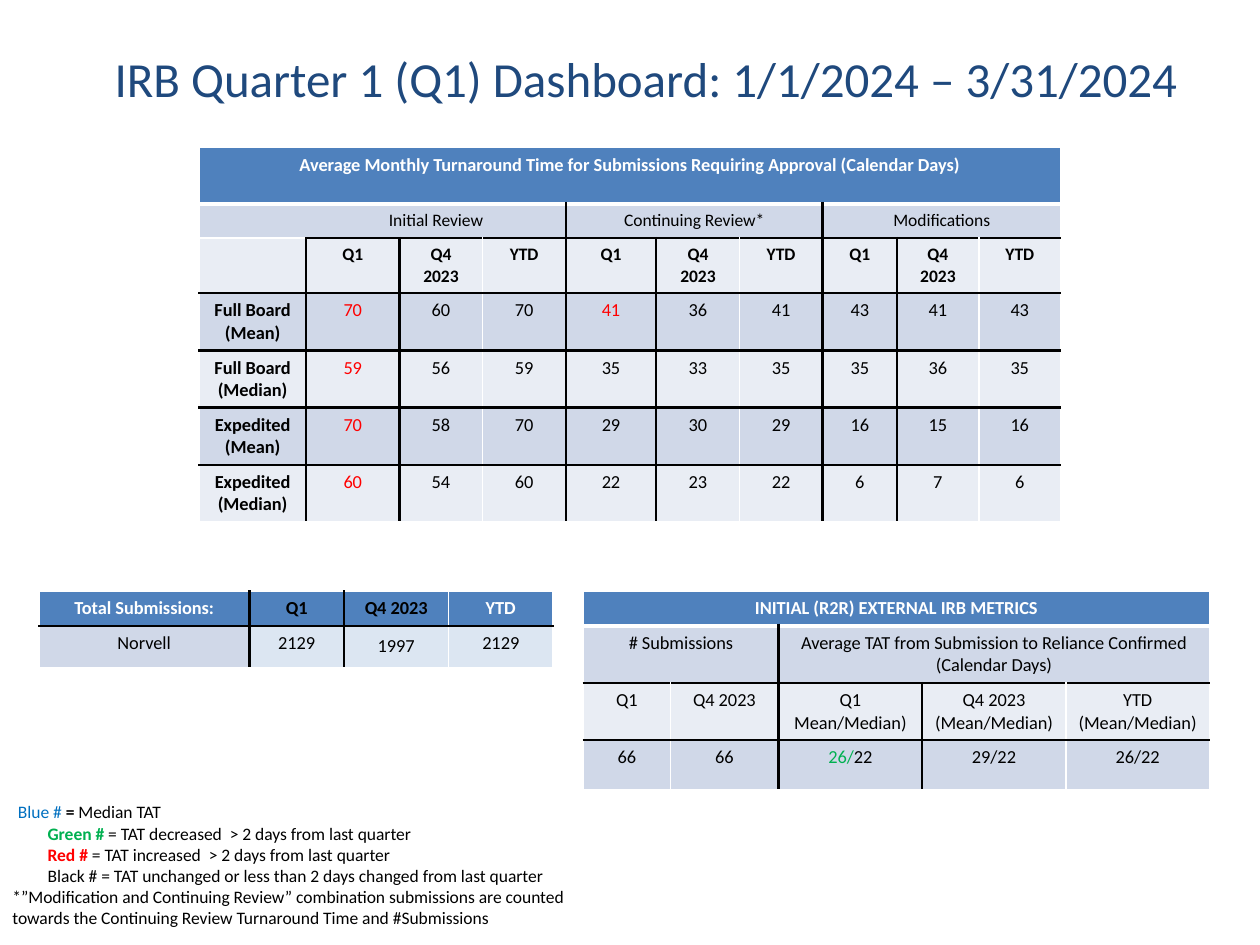
from lxml.etree import SubElement
from pptx import Presentation
from pptx.dml.color import RGBColor
from pptx.enum.text import MSO_ANCHOR, MSO_AUTO_SIZE, PP_ALIGN
from pptx.oxml.ns import qn
from pptx.util import Inches, Pt

WHITE = RGBColor(0xFF, 0xFF, 0xFF)
BLACK = RGBColor(0x00, 0x00, 0x00)
NAVY = RGBColor(0x1F, 0x49, 0x7D)
HEADER_BLUE = RGBColor(0x4F, 0x81, 0xBD)
BAND_DARK = RGBColor(0xD0, 0xD8, 0xE8)
BAND_LIGHT = RGBColor(0xE9, 0xED, 0xF4)
PALE_BLUE = RGBColor(0xDC, 0xE6, 0xF2)
BLUE = RGBColor(0x00, 0x70, 0xC0)
GREEN = RGBColor(0x00, 0xB0, 0x50)
RED = RGBColor(0xFF, 0x00, 0x00)


def format_span(span, size, color=BLACK, bold=False):
    span.font.name = "Calibri"
    span.font.size = Pt(size)
    span.font.color.rgb = color
    span.font.bold = bold


def add_grid(left, top, widths, heights, rows, dark_columns, dark_rows):
    """Add a table; None continues the cell to its left.

    dark_columns lists, for each row, the column edges drawn black;
    dark_rows lists the row edges drawn black.
    """
    frame = slide.shapes.add_table(len(rows), len(widths), Inches(left), Inches(top),
                                   Inches(sum(widths)), Inches(sum(heights)))
    grid = frame.table
    grid.first_row = grid.horz_banding = False
    for column, width in zip(grid.columns, widths):
        column.width = Inches(width)
    for row, height in zip(grid.rows, heights):
        row.height = Inches(height)
    for r, texts in enumerate(rows):
        for c, text in enumerate(texts):
            cell = grid.cell(r, c)
            cell.margin_left = cell.margin_right = Inches(0.09)
            cell.margin_top = cell.margin_bottom = Inches(0.05)
            properties = cell._tc.get_or_add_tcPr()
            edges = {"a:lnL": c in dark_columns[r], "a:lnR": c + 1 in dark_columns[r],
                     "a:lnT": r in dark_rows, "a:lnB": r + 1 in dark_rows}
            for tag, dark in edges.items():
                under_header = (r, tag) in ((0, "a:lnB"), (1, "a:lnT"))
                points = 1.5 if dark else 3 if under_header else 1
                line = SubElement(properties, qn(tag), w=str(Pt(points)))
                fill = SubElement(line, qn("a:solidFill"))
                SubElement(fill, qn("a:srgbClr"), val=str(BLACK if dark else WHITE))
            cell.fill.solid()
            cell.fill.fore_color.rgb = HEADER_BLUE if r == 0 else BAND_DARK if r % 2 else BAND_LIGHT
            para = cell.text_frame.paragraphs[0]
            para.alignment = PP_ALIGN.CENTER
            if text:
                para.text = text
                format_span(para.runs[0], 10.5, WHITE if r == 0 else BLACK, r == 0)
            else:
                SubElement(para._p, qn("a:endParaRPr"), sz="1000")
        for c, text in enumerate(texts):
            if text is not None and texts[c + 1:c + 2] == [None]:
                last = c + 1
                while last + 1 < len(texts) and texts[last + 1] is None:
                    last += 1
                grid.cell(r, c).merge(grid.cell(r, last))
    return grid


deck = Presentation()
deck.slide_width, deck.slide_height = Inches(10), Inches(7.5)
slide = deck.slides.add_slide(deck.slide_layouts[5])

title = slide.shapes.title
title.left, title.top, title.width, title.height = Inches(0.25), Inches(0.33), Inches(9.75), Inches(0.57)
title.text_frame.text = "IRB Quarter 1 (Q1) Dashboard: 1/1/2024 – 3/31/2024"
title.text_frame.auto_size = MSO_AUTO_SIZE.NONE
format_span(title.text_frame.paragraphs[0].runs[0], 28, NAVY)

# Total submissions
submissions = add_grid(
    0.31, 4.69, [1.67, 0.75, 0.83, 0.83], [0.24, 0.33],
    [["Total Submissions:", "Q1", "Q4 2023", "YTD"], ["Norvell", "2129", "1997", "2129"]],
    [(1, 2)] * 2, (1,))
for c in (1, 2, 3):
    submissions.cell(1, c).fill.fore_color.rgb = PALE_BLUE
for c in (1, 2):
    submissions.cell(0, c).text_frame.paragraphs[0].runs[0].font.color.rgb = BLACK
submissions.cell(1, 2).vertical_anchor = MSO_ANCHOR.MIDDLE

# Turnaround time
turnaround = add_grid(
    1.58, 1.17, [0.85, 0.74, 0.66, 0.66, 0.72, 0.66, 0.66, 0.59, 0.65, 0.65],
    [0.45, 0.27, 0.43] + [0.45] * 4,
    [["Average Monthly Turnaround Time for Submissions Requiring Approval (Calendar Days)"] + [None] * 9,
     ["", "Initial Review", None, None, "Continuing Review*", None, None, "Modifications", None, None],
     [""] + ["Q1", "Q4 2023", "YTD"] * 3,
     ["Full Board (Mean)", "70", "60", "70", "41", "36", "41", "43", "41", "43"],
     ["Full Board (Median)", "59", "56", "59", "35", "33", "35", "35", "36", "35"],
     ["Expedited (Mean)", "70", "58", "70", "29", "30", "29", "16", "15", "16"],
     ["Expedited (Median)", "60", "54", "60", "22", "23", "22", "6", "7", "6"]],
    [(), (4, 7)] + [(1, 2, 4, 5, 7, 8)] * 5, (2, 3, 4, 5, 6))
for r in (1, 2):
    for c in range(1, 10):
        cell = turnaround.cell(r, c)
        cell.margin_left = cell.margin_right = Inches(0.1)
        for span in cell.text_frame.paragraphs[0].runs:
            format_span(span, 10, bold=r == 2)
for r in range(3, 7):
    turnaround.cell(r, 0).text_frame.paragraphs[0].runs[0].font.bold = True
for r, c in ((3, 1), (4, 1), (5, 1), (6, 1), (3, 4)):
    turnaround.cell(r, c).text_frame.paragraphs[0].runs[0].font.color.rgb = RED
# The row-label column has no black line above its blank heading
for r, tag in ((1, "a:lnB"), (2, "a:lnT")):
    line = turnaround.cell(r, 0)._tc.tcPr.find(qn(tag))
    line.set("w", str(Pt(1)))
    line.find(".//" + qn("a:srgbClr")).set("val", str(WHITE))
# No line between the blank heading and Initial Review
for c, tag in ((0, "a:lnR"), (1, "a:lnL")):
    line = turnaround.cell(1, c)._tc.tcPr.find(qn(tag))
    line.remove(line[0])
    SubElement(line, qn("a:noFill"))

# External IRB metrics
metrics = add_grid(
    4.63, 4.69, [0.69, 0.86, 1.14, 1.14, 1.14], [0.24, 0.45, 0.32, 0.39],
    [["INITIAL (R2R) EXTERNAL IRB METRICS"] + [None] * 4,
     ["# Submissions", None, "Average TAT from Submission to Reliance Confirmed (Calendar Days)", None, None],
     ["Q1", "Q4 2023", "Q1 Mean/Median)", "Q4 2023 (Mean/Median)", "YTD (Mean/Median)"],
     ["66", "66", "26/", "29/22", "26/22"]],
    [(), (2,), (2, 3), (2, 3)], (2, 3))
para = metrics.cell(3, 2).text_frame.paragraphs[0]
para.runs[0].font.color.rgb = GREEN
span = para.add_run()
span.text = "22"
format_span(span, 10.5)

# Legend: (indent, [(text, size, colour, bold), ...])
legend = [
    (0, [(" ", 14, BLACK, False), ("Blue # ", 10, BLUE, False), ("= ", 10, BLACK, True),
         ("Median TAT", 10, BLACK, False)]),
    (0.28, [("Green #", 10, GREEN, True),
            (" = TAT decreased  > 2 days from last quarter", 10, BLACK, False)]),
    (0.28, [("Red # ", 10, RED, True),
            ("= TAT increased  > 2 days from last quarter", 10, BLACK, False)]),
    (0.28, [("Black # = TAT unchanged or less than 2 days changed from last quarter", 10, BLACK, False)]),
    (0, [("*”Modification and Continuing Review” combination submissions are counted towards "
          "the Continuing Review Turnaround Time and #Submissions", 10, BLACK, False)]),
]
box = slide.shapes.add_textbox(Inches(0), Inches(6.25), Inches(4.71), Inches(1.35))
box.text_frame.word_wrap = True
for index, (indent, spans) in enumerate(legend):
    para = box.text_frame.add_paragraph() if index else box.text_frame.paragraphs[0]
    para._p.get_or_add_pPr().set("marL", str(Inches(indent)))
    for text, size, color, bold in spans:
        span = para.add_run()
        span.text = text
        format_span(span, size, color, bold)

deck.save("out.pptx")
